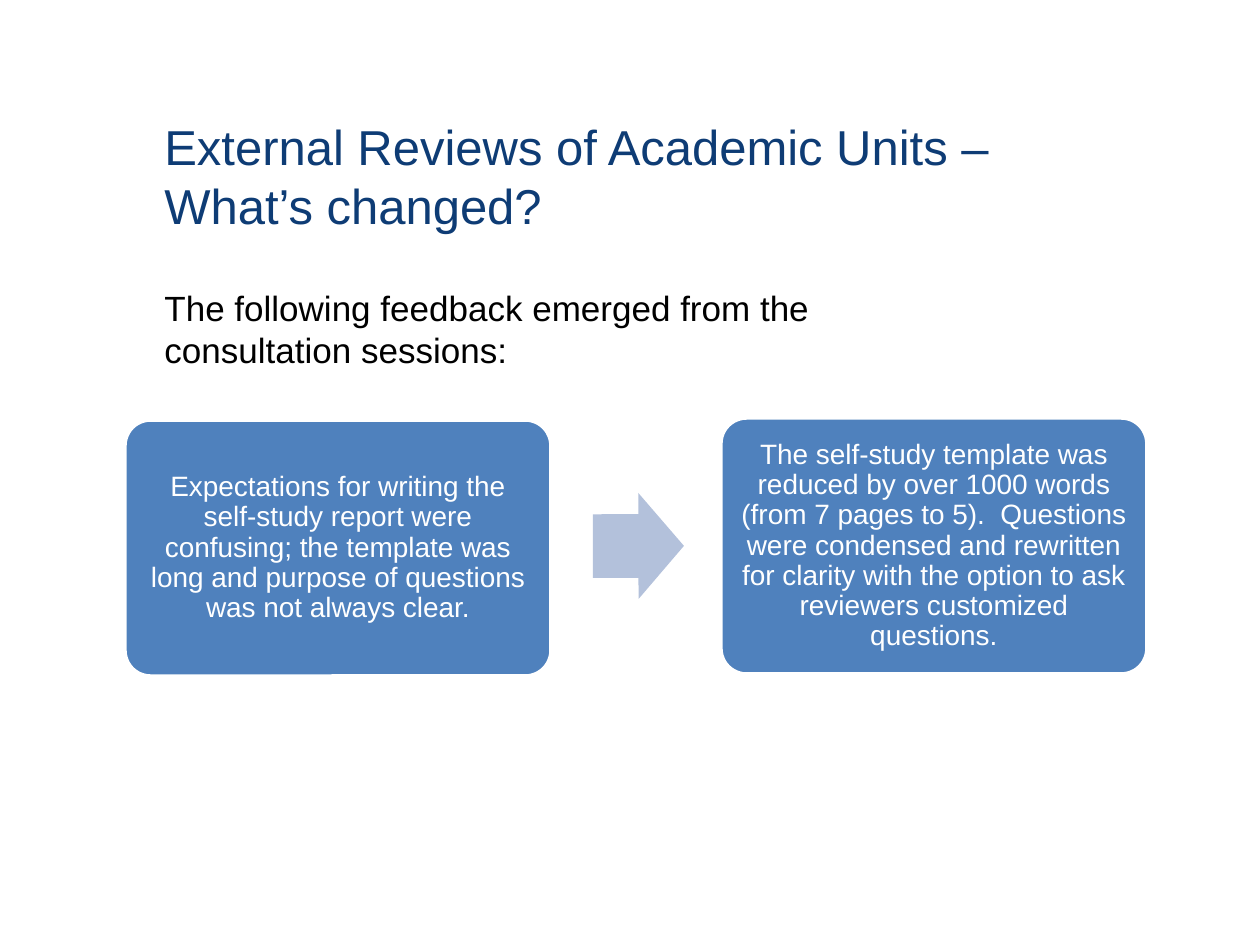
from pptx import Presentation
from pptx.dml.color import RGBColor
from pptx.enum.shapes import MSO_SHAPE
from pptx.enum.text import MSO_ANCHOR, PP_ALIGN
from pptx.util import Emu, Pt

NAVY = RGBColor(0x0E, 0x3C, 0x75)
BLUE = RGBColor(0x4F, 0x81, 0xBD)
PALE = RGBColor(0xB3, 0xC1, 0xDB)
BLACK = RGBColor(0, 0, 0)
WHITE = RGBColor(255, 255, 255)


def px(n):
    """Turn px, 126 to the inch, into EMU."""
    return Emu(round(n * 914400 / 126))


def write(shape, text, size, color, anchor=MSO_ANCHOR.TOP,
          align=PP_ALIGN.LEFT, spacing=None, inset=None):
    frame = shape.text_frame
    frame.word_wrap = True
    frame.vertical_anchor = anchor
    if inset is not None:
        frame.margin_left = frame.margin_right = px(inset)
        frame.margin_top = frame.margin_bottom = px(inset)
    para = frame.paragraphs[0]
    para.alignment = align
    para.line_spacing = spacing
    run = para.add_run()
    run.text = text
    run.font.name = "Arial"
    run.font.size = Pt(size)
    run.font.color.rgb = color


prs = Presentation()
prs.slide_width, prs.slide_height = px(1260), px(945)
slide = prs.slides.add_slide(prs.slide_layouts[6])
shapes = slide.shapes

title = shapes.add_textbox(px(152), px(97), px(863), px(157))
write(title, "External Reviews of Academic Units – What’s changed?",
      28, NAVY, anchor=MSO_ANCHOR.MIDDLE)

intro = shapes.add_textbox(px(152), px(280), px(863), px(572))
write(intro, "The following feedback emerged from the consultation sessions:",
      20, BLACK)

cards = [
    (125, 420, "Expectations for writing the self-study report were confusing; "
     "the template was long and purpose of questions was not always clear."),
    (721, 418, "The self-study template was reduced by over 1000 words "
     "(from 7 pages to 5).  Questions were condensed and rewritten for clarity "
     "with the option to ask reviewers customized questions."),
]
for left, top, text in cards:
    card = shapes.add_shape(MSO_SHAPE.ROUNDED_RECTANGLE,
                            px(left), px(top), px(426), px(256))
    card.adjustments[0] = 0.1
    card.shadow.inherit = False
    card.fill.solid()
    card.fill.fore_color.rgb = BLUE
    card.line.color.rgb = WHITE
    card.line.width = Pt(2)
    write(card, text, 16, WHITE, anchor=MSO_ANCHOR.MIDDLE,
          align=PP_ALIGN.CENTER, spacing=0.9, inset=9)

arrow = shapes.add_shape(MSO_SHAPE.RIGHT_ARROW,
                         px(593), px(493), px(91), px(106))
arrow.adjustments[0] = 0.6
arrow.adjustments[1] = 0.5
arrow.rotation = 359.9
arrow.shadow.inherit = False
arrow.fill.solid()
arrow.fill.fore_color.rgb = PALE
arrow.line.fill.background()

prs.save("out.pptx")
